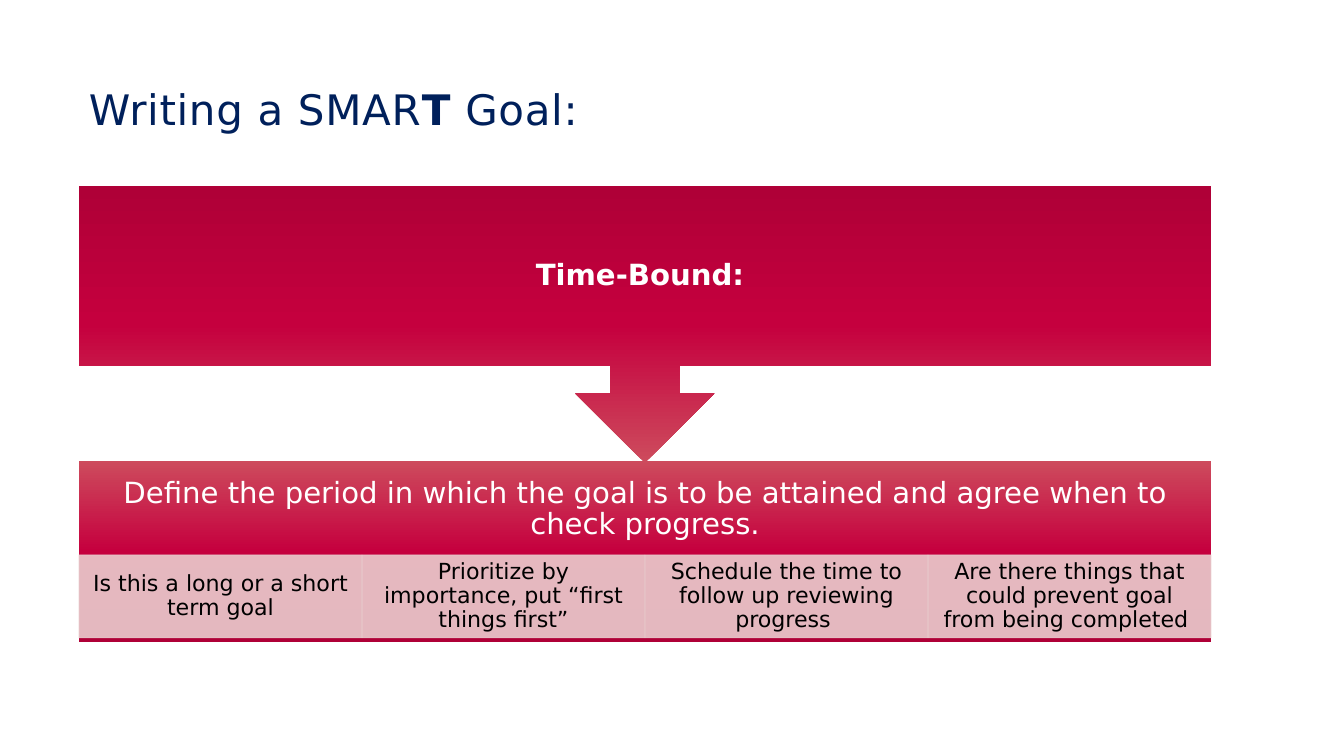
"""Build the Time-Bound slide of the SMART goal series."""
from copy import deepcopy

from lxml import etree
from pptx import Presentation
from pptx.dml.color import RGBColor
from pptx.enum.shapes import MSO_SHAPE
from pptx.enum.text import MSO_ANCHOR, PP_ALIGN
from pptx.oxml.ns import qn
from pptx.util import Pt

RECTANGLE, CALLOUT = MSO_SHAPE.RECTANGLE, MSO_SHAPE.UP_ARROW_CALLOUT
MIDDLE = MSO_ANCHOR.MIDDLE
LEFT, CENTER = PP_ALIGN.LEFT, PP_ALIGN.CENTER
EMU_PER_PX = 914400 / 84
FONT = "DejaVu Sans"
COLORS = {
    "navy": "00205B", "white": "FFFFFF", "black": "000000", "pink": "EACCCE",
    "rose": "CD4B5D", "crimson": "C5003E", "wine": "AF0037",
}
GRADIENT = [(0, "rose"), (0.5, "crimson"), (1, "wine")]
BLOCK_LEFT, BLOCK_WIDTH = 79, 1132
QUESTION_TOP, QUESTION_HEIGHT = 555, 83
QUESTIONS = [
    "Is this a long or a short term goal",
    "Prioritize by importance, put “first things first”",
    "Schedule the time to follow up reviewing progress ",
    "Are there things that could prevent goal from being completed ",
]


def px(*lengths):
    """Turn pixel lengths into EMU."""
    return [round(length * EMU_PER_PX) for length in lengths]


def write(shape, runs, size, color, alignment, insets):
    """Fill a shape with one paragraph of (text, bold) runs."""
    frame = shape.text_frame
    frame.word_wrap = True
    frame.vertical_anchor = MIDDLE
    side, edge = px(*insets)
    frame.margin_left = frame.margin_right = side
    frame.margin_top = frame.margin_bottom = edge
    paragraph = frame.paragraphs[0]
    paragraph.alignment = alignment
    paragraph.line_spacing = 0.9
    for text, bold in runs:
        run = paragraph.add_run()
        run.text = text
        run.font.name = FONT
        run.font.size = Pt(size)
        run.font.bold = bold
        run.font.color.rgb = RGBColor.from_string(COLORS[color])
    return paragraph


presentation = Presentation()
presentation.slide_width, presentation.slide_height = px(1344, 756)
slide = presentation.slides.add_slide(presentation.slide_layouts[5])
shapes = slide.shapes

title = shapes.title
title.left, title.top, title.width, title.height = px(81, 59, 1133, 106)
title_runs = [("Writing a SMAR", False), ("T", True), (" Goal:", False)]
title_paragraph = write(title, title_runs, 36, "navy", LEFT, (8, 4))
for run in title_paragraph.runs:
    run._r.get_or_add_rPr().set("spc", "60")

panels = [
    (RECTANGLE, 461, 181, 0, 97, False,
     "Define the period in which the goal is to be attained and agree when to check progress."),
    (CALLOUT, 186, 277, 180, 181, True, "Time-Bound: "),
]
for kind, top, height, rotation, text_height, bold, text in panels:
    panel = shapes.add_shape(kind, *px(BLOCK_LEFT, top, BLOCK_WIDTH, height))
    panel.shadow.inherit = False
    panel.rotation = rotation
    panel.line.fill.background()
    panel.fill.gradient()
    panel.fill.gradient_angle = 270
    stop_list = panel._element.spPr.find(qn("a:gradFill")).find(qn("a:gsLst"))
    stop_list.append(deepcopy(stop_list[-1]))
    for stop, (position, color) in zip(panel.fill.gradient_stops, GRADIENT):
        stop.position = position
        stop.color.rgb = RGBColor.from_string(COLORS[color])
    label = shapes.add_textbox(*px(BLOCK_LEFT, top, BLOCK_WIDTH, text_height))
    write(label, [(text, bold)], 25, "white", CENTER, (16, 16))

question_width = BLOCK_WIDTH // len(QUESTIONS)
for column, question in enumerate(QUESTIONS):
    left = BLOCK_LEFT + column * question_width
    cell = shapes.add_shape(RECTANGLE, *px(left, QUESTION_TOP, question_width, QUESTION_HEIGHT))
    cell.shadow.inherit = False
    cell.line.width = Pt(0.5)
    for fill in (cell.fill, cell.line.fill):
        fill.solid()
        fill.fore_color.rgb = RGBColor.from_string(COLORS["pink"])
    for color_element in cell._element.spPr.iter(qn("a:srgbClr")):
        etree.SubElement(color_element, qn("a:alpha"), val="90000")
    write(cell, [(question, False)], 19, "black", CENTER, (13, 3))

presentation.save("out.pptx")
